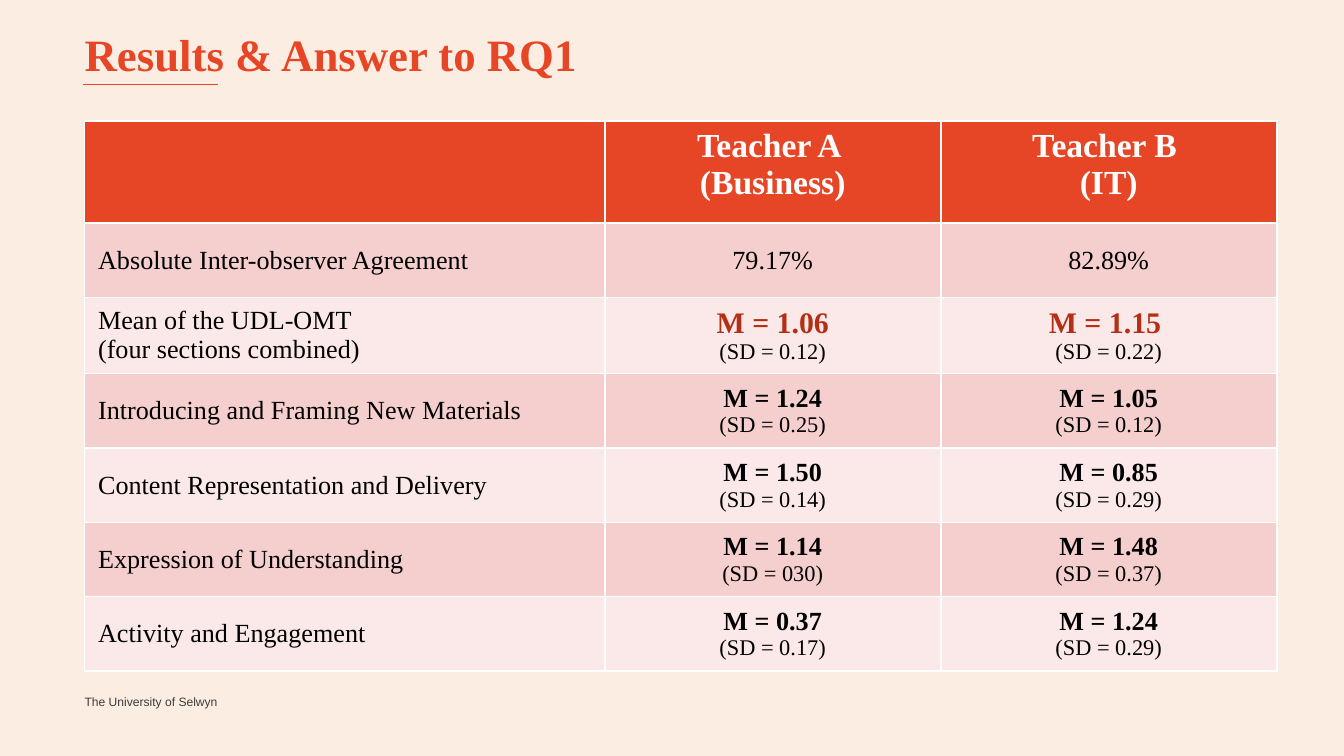
"""Build the slide that answers research question 1 with a table of teacher results."""
import copy
from dataclasses import dataclass

import lxml.etree
import pptx
import pptx.dml.color
import pptx.enum.shapes
import pptx.enum.text
import pptx.oxml.ns
import pptx.slide
import pptx.text.text
import pptx.util

Inches = pptx.util.Inches
Align = pptx.enum.text.PP_ALIGN
Anchor = pptx.enum.text.MSO_ANCHOR


@dataclass(frozen=True)
class Theme:
    background: str = "FCEDE2"
    accent: str = "E64626"
    emphasis: str = "B42F15"
    ink: str = "000000"
    white: str = "FFFFFF"
    footer_ink: str = "3C3C3B"
    bands: tuple[str, str] = ("F5CFCD", "FAE9E8")
    serif: str = "Times New Roman"
    sans: str = "Arial"
    title_size: float = 24
    header_size: float = 18
    mean_size: float = 16
    body_size: float = 14
    deviation_size: float = 12
    footer_size: float = 6.5


THEME = Theme()


@dataclass(frozen=True)
class Span:
    text: str
    size: float = THEME.body_size
    color: str = THEME.ink
    bold: bool = False
    font: str = THEME.serif


@dataclass(frozen=True)
class Score:
    mean: str
    deviation: str
    highlighted: bool = False

    def spans(self) -> list[Span]:
        size = THEME.mean_size if self.highlighted else THEME.body_size
        color = THEME.emphasis if self.highlighted else THEME.ink
        return [Span(f"M = {self.mean}", size, color, True),
                Span(f"(SD = {self.deviation})", THEME.deviation_size)]


@dataclass(frozen=True)
class Measure:
    label: list[Span]
    teachers: tuple[list[Span], list[Span]]


def scored(label: list[str], first: Score, second: Score) -> Measure:
    return Measure([Span(line) for line in label], (first.spans(), second.spans()))


def heading(*lines: str) -> list[Span]:
    return [Span(line, THEME.header_size, THEME.white, True) for line in lines]


HEADER = Measure([], (heading("Teacher A ", "(Business)"), heading("Teacher B ", "(IT)")))
MEASURES = [
    Measure([Span("Absolute Inter-observer Agreement")], ([Span("79.17%")], [Span("82.89%")])),
    scored(["Mean of the UDL-OMT ", "(four sections combined)"],
           Score("1.06", "0.12", True), Score("1.15 ", "0.22", True)),
    scored(["Introducing and Framing New Materials"], Score("1.24", "0.25"), Score("1.05", "0.12")),
    scored(["Content Representation and Delivery"], Score("1.50", "0.14"), Score("0.85", "0.29")),
    scored(["Expression of Understanding"], Score("1.14", "030"), Score("1.48", "0.37")),
    scored(["Activity and Engagement"], Score("0.37", "0.17"), Score("1.24", "0.29")),
]


def rgb(value: str) -> pptx.dml.color.RGBColor:
    return pptx.dml.color.RGBColor.from_string(value)


def write_lines(para: pptx.text.text._Paragraph, lines: list[Span]) -> None:
    for index, line in enumerate(lines):
        span = para.add_run()
        span.text = line.text
        span.font.name = line.font
        span.font.size = pptx.util.Pt(line.size)
        span.font.bold = line.bold
        span.font.color.rgb = rgb(line.color)
        if index < len(lines) - 1:
            para.add_line_break()
            para._p[-1].append(copy.deepcopy(span._r.get_or_add_rPr()))


def add_text(page: pptx.slide.Slide, left: float, top: float, width: float, height: float,
             line: Span) -> None:
    box = page.shapes.add_textbox(Inches(left), Inches(top), Inches(width), Inches(height))
    frame = box.text_frame
    frame.word_wrap = True
    frame.margin_left = frame.margin_right = frame.margin_top = frame.margin_bottom = 0
    write_lines(frame.paragraphs[0], [line])


def add_rule(page: pptx.slide.Slide, left: float, top: float, width: float) -> None:
    rule = page.shapes.add_connector(pptx.enum.shapes.MSO_CONNECTOR.STRAIGHT, Inches(left),
                                     Inches(top), Inches(left + width), Inches(top))
    rule.line.color.rgb = rgb(THEME.accent)
    rule.line.width = pptx.util.Pt(0.75)
    lxml.etree.SubElement(rule._element.spPr, pptx.oxml.ns.qn("a:effectLst"))


def add_results(page: pptx.slide.Slide, left: float, top: float) -> None:
    columns = [3.87, 2.5, 2.5]
    total_height, header_height = 4.08, 0.76
    body_height = (total_height - header_height) / len(MEASURES)
    heights = [header_height] + [body_height] * len(MEASURES)
    frame = page.shapes.add_table(len(heights), len(columns), Inches(left), Inches(top),
                                  Inches(sum(columns)), Inches(total_height))
    table = frame.table
    for column, width in zip(table.columns, columns):
        column.width = Inches(width)
    for index, (measure, height) in enumerate(zip([HEADER, *MEASURES], heights)):
        table.rows[index].height = Inches(height)
        is_header = index == 0
        fill = THEME.accent if is_header else THEME.bands[(index - 1) % 2]
        for position, lines in enumerate([measure.label, *measure.teachers]):
            cell = table.cell(index, position)
            cell.fill.solid()
            cell.fill.fore_color.rgb = rgb(fill)
            cell.vertical_anchor = Anchor.TOP if is_header else Anchor.MIDDLE
            para = cell.text_frame.paragraphs[0]
            para.alignment = Align.CENTER if position else Align.LEFT
            write_lines(para, lines)


def main() -> None:
    deck = pptx.Presentation()
    deck.slide_width = Inches(10)
    deck.slide_height = deck.slide_width * 9 // 16
    page = deck.slides.add_slide(deck.slide_layouts[6])
    page.background.fill.solid()
    page.background.fill.fore_color.rgb = rgb(THEME.background)
    add_text(page, 0.63, 5.17, 1.03, 0.13,
             Span("The University of Selwyn", THEME.footer_size, THEME.footer_ink, font=THEME.sans))
    add_rule(page, 0.62, 0.63, 1)
    add_text(page, 0.63, 0.2, 8.74, 0.4,
             Span("Results & Answer to RQ1", THEME.title_size, THEME.accent, True))
    add_results(page, 0.63, 0.9)
    deck.save("out.pptx")


if __name__ == "__main__":
    main()
